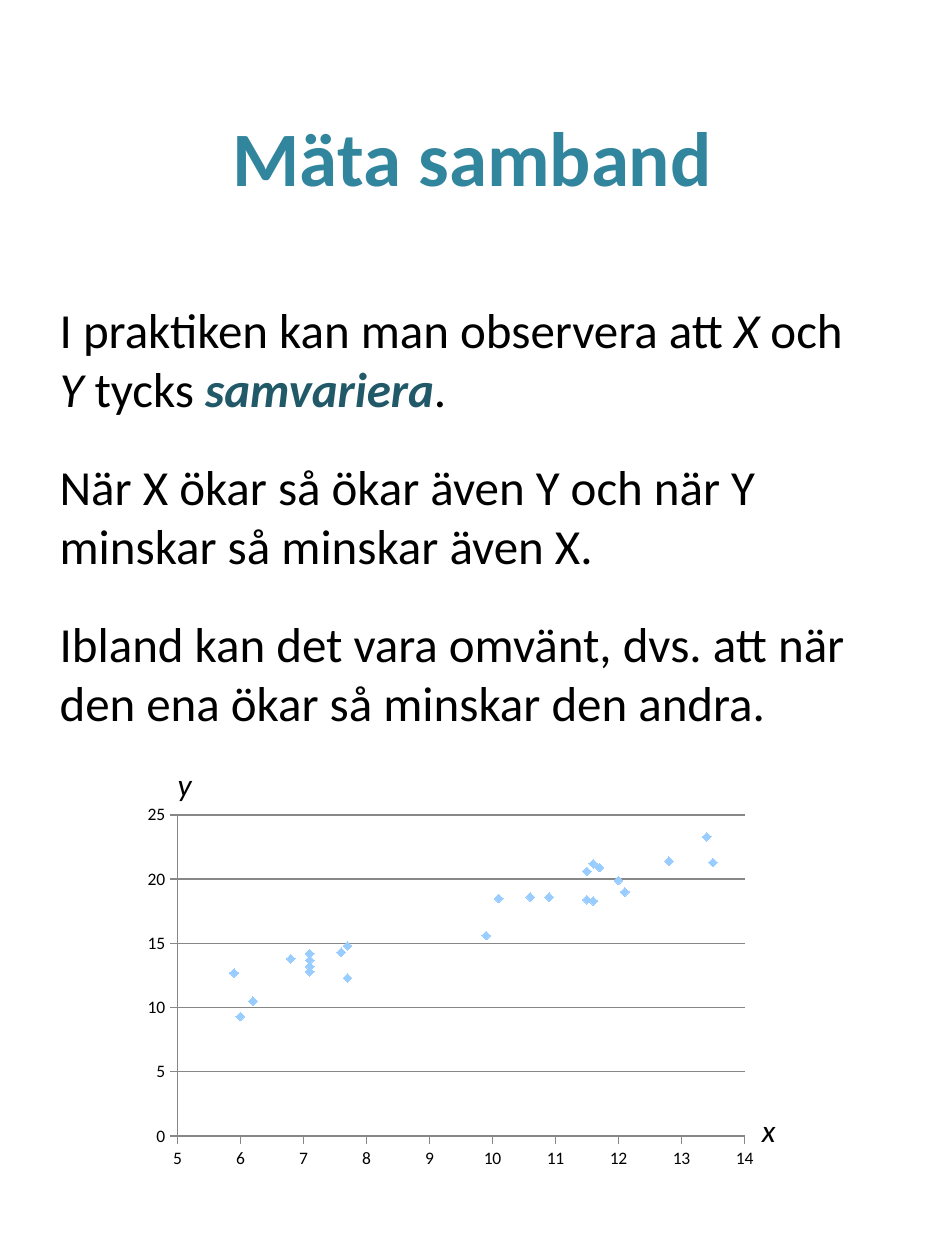
from lxml import etree
from pptx import Presentation
from pptx.chart.data import XyChartData
from pptx.dml.color import RGBColor
from pptx.enum.chart import XL_CHART_TYPE, XL_MARKER_STYLE, XL_TICK_MARK
from pptx.enum.text import MSO_ANCHOR, PP_ALIGN
from pptx.oxml.ns import qn
from pptx.util import Inches, Pt

W, H = Inches(7.5), Inches(10)
FONT = "Calibri"
COLORS = {"title": "31859C", "text": "000000", "accent": "215968",
          "marker": "99CCFF", "axis": "878787"}


def rgb(name):
    return RGBColor.from_string(COLORS[name])


def add_text(x, y, w, h, paragraphs, size, gap=0):
    """Place a text box by shares of the slide; runs are (text, colour, bold, italic)."""
    tf = s.shapes.add_textbox(int(W * x), int(H * y), int(W * w), int(H * h)).text_frame
    tf.word_wrap = True
    for i, runs in enumerate(paragraphs):
        p = tf.paragraphs[0] if i == 0 else tf.add_paragraph()
        if i:
            p.space_before = Pt(gap)
        for text, color, bold, italic in runs:
            r = p.add_run()
            r.text = text
            r.font.name, r.font.size = FONT, Pt(size)
            r.font.bold, r.font.italic = bold, italic
            r.font.color.rgb = rgb(color)
    return tf


prs = Presentation()
prs.slide_width, prs.slide_height = W, H
s = prs.slides.add_slide(prs.slide_layouts[6])

# Title and body
tf = add_text(0.05, 0.04, 0.9, 0.167, [[("Mäta samband", "title", True, False)]], 44)
tf.vertical_anchor = MSO_ANCHOR.MIDDLE
tf.paragraphs[0].alignment = PP_ALIGN.CENTER

body = [
    [("I praktiken kan man observera att ", "text", False, False),
     ("X", "text", False, True),
     (" och ", "text", False, False),
     ("Y", "text", False, True),
     (" tycks ", "text", False, False),
     ("samvariera", "accent", True, True),
     (".", "text", False, False)],
    [("När X ökar så ökar även Y och när Y minskar så minskar även X.",
      "text", False, False)],
    [("Ibland kan det vara omvänt, dvs. att när den ena ökar så minskar den andra.",
      "text", False, False)],
]
add_text(0.05, 0.233, 0.87, 0.684, body, 28, gap=22.5)

# Scatter chart
points = [
    (7.1, 12.8), (6.8, 13.8), (10.1, 18.5), (6.2, 10.5), (12.8, 21.4),
    (11.7, 20.9), (10.9, 18.6), (13.5, 21.3), (5.9, 12.7), (11.6, 21.2),
    (7.1, 13.7), (7.1, 13.2), (6, 9.3), (7.7, 12.3), (12.1, 19),
    (11.6, 18.3), (10.6, 18.6), (7.1, 14.2), (9.9, 15.6), (7.6, 14.3),
    (11.5, 18.4), (7.7, 14.8), (11.5, 20.6), (13.4, 23.3), (12, 19.9),
]
data = XyChartData(number_format="General")
series = data.add_series("Series 1")
for x, y in points:
    series.add_data_point(x, y)
chart = s.shapes.add_chart(XL_CHART_TYPE.XY_SCATTER, int(W * 0.143), int(H * 0.633),
                           int(W * 0.667), int(H * 0.3), data).chart
chart.has_legend = chart.has_title = False
chart.font.name, chart.font.size = FONT, Pt(10)
chart.font.color.rgb = rgb("text")

plot = chart.plots[0]
plot.vary_by_categories = False
dots = plot.series[0]
dots.smooth = False
dots.format.line.fill.background()
dots.marker.style, dots.marker.size = XL_MARKER_STYLE.DIAMOND, 5
dots.marker.format.fill.solid()
dots.marker.format.fill.fore_color.rgb = rgb("marker")
dots.marker.format.line.color.rgb = rgb("marker")

for axis, low, high, step in ((chart.category_axis, 5, 14, 1), (chart.value_axis, 0, 25, 5)):
    axis.minimum_scale, axis.maximum_scale, axis.major_unit = low, high, step
    axis.has_major_gridlines = axis is not chart.category_axis and step == 5
    axis.major_tick_mark, axis.minor_tick_mark = XL_TICK_MARK.OUTSIDE, XL_TICK_MARK.NONE
    axis.tick_labels.number_format = "General"
    axis.tick_labels.number_format_is_linked = False
    axis.format.line.color.rgb = rgb("axis")
grid = chart.value_axis.major_gridlines.format.line
grid.color.rgb, grid.width = rgb("axis"), Pt(0.75)

# Fixed inner plot area, as shares of the chart
area = chart._chartSpace.chart.plotArea
for old in area.findall(qn("c:layout")):
    area.remove(old)
layout = etree.Element(qn("c:layout"))
area.insert(0, layout)
manual = etree.SubElement(layout, qn("c:manualLayout"))
for tag, val in (("layoutTarget", "inner"), ("xMode", "edge"), ("yMode", "edge"),
                 ("x", 0.067), ("y", 0.046), ("w", 0.9), ("h", 0.85)):
    etree.SubElement(manual, qn(f"c:{tag}")).set("val", str(val))

# Axis names
for name, x, y, w in (("x", 0.793, 0.877, 0.084), ("y", 0.175, 0.602, 0.063)):
    add_text(x, y, w, 0.04, [[(name, "text", False, True)]], 18)

prs.save("out.pptx")
